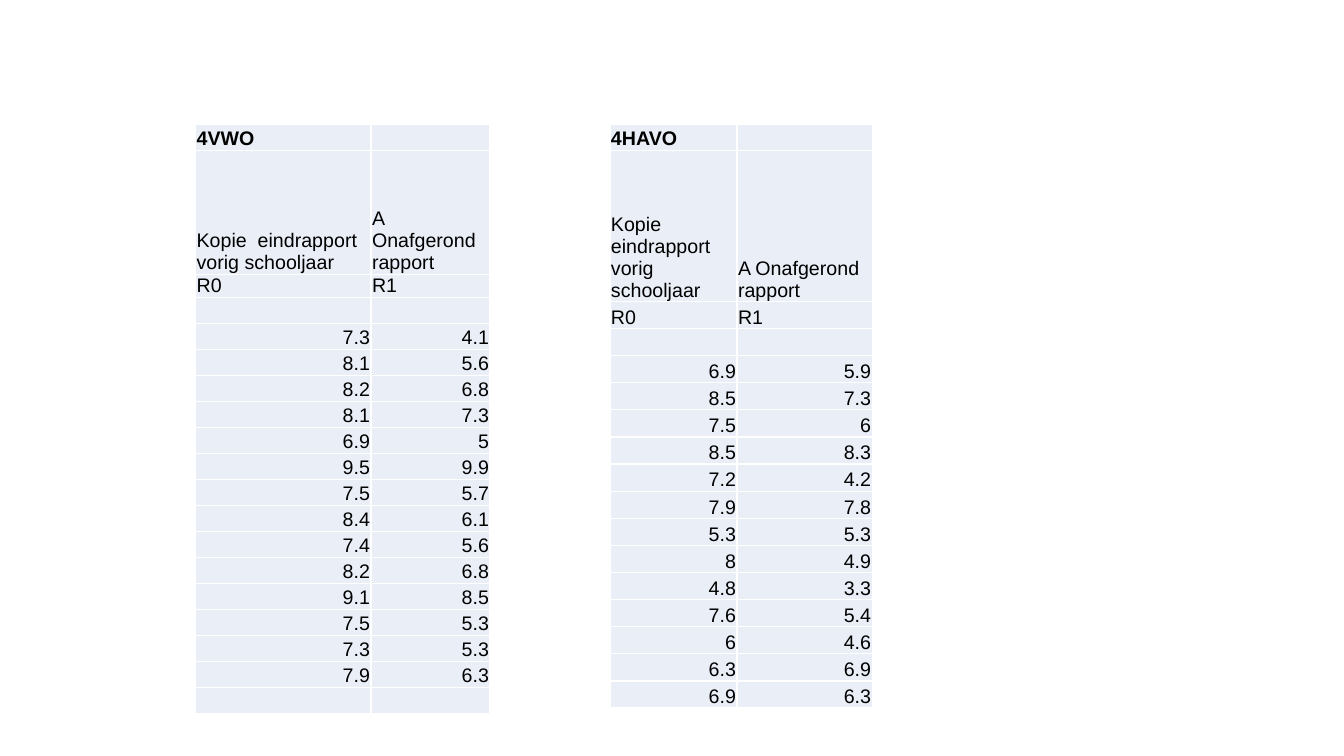
from pptx import Presentation
from pptx.dml.color import RGBColor
from pptx.enum.text import MSO_ANCHOR, PP_ALIGN
from pptx.oxml.ns import qn
from pptx.util import Inches, Pt
from lxml import etree

BOTTOM = MSO_ANCHOR.BOTTOM
LEFT, RIGHT = PP_ALIGN.LEFT, PP_ALIGN.RIGHT

THEME = {
    "font": "Arial",
    "size": Pt(14),
    "text": RGBColor.from_string("000000"),
    "cell": RGBColor.from_string("EAEFF7"),
    "border": "FFFFFF",
    "border_width": Pt(1),
    "inset": Inches(0.01),
}

# Report marks per class: (last year's final report, unrounded report)
HEADINGS = ("Kopie  eindrapport vorig schooljaar", "A Onafgerond rapport")
PERIODS = ("R0", "R1")
BLANK = ("", "")
VWO_MARKS = [
    ("7.3", "4.1"), ("8.1", "5.6"), ("8.2", "6.8"), ("8.1", "7.3"), ("6.9", "5"),
    ("9.5", "9.9"), ("7.5", "5.7"), ("8.4", "6.1"), ("7.4", "5.6"), ("8.2", "6.8"),
    ("9.1", "8.5"), ("7.5", "5.3"), ("7.3", "5.3"), ("7.9", "6.3"), BLANK,
]
HAVO_MARKS = [
    ("6.9", "5.9"), ("8.5", "7.3"), ("7.5", "6"), ("8.5", "8.3"), ("7.2", "4.2"),
    ("7.9", "7.8"), ("5.3", "5.3"), ("8", "4.9"), ("4.8", "3.3"), ("7.6", "5.4"),
    ("6", "4.6"), ("6.3", "6.9"), ("6.9", "6.3"),
]

# Layout in inches: top rows are title, headings and periods; the rest share what is left
TOP = 1.23
CLASSES = [
    {"name": "4VWO", "marks": VWO_MARKS, "left": 1.94, "height": 5.84,
     "columns": (1.74, 1.18), "top_rows": (0.26, 1.23, 0.22)},
    {"name": "4HAVO", "marks": HAVO_MARKS, "left": 6.05, "height": 5.8,
     "columns": (1.26, 1.34), "top_rows": (0.26, 1.5, 0.27)},
]


def style_cell(cell, text, bold, align):
    cell.margin_left = cell.margin_right = cell.margin_top = THEME["inset"]
    cell.margin_bottom = 0
    cell.vertical_anchor = BOTTOM
    paragraph = cell.text_frame.paragraphs[0]
    paragraph.alignment = align
    if text:
        paragraph.add_run().text = text
    else:
        # An empty cell takes its line height from the paragraph end
        end = etree.SubElement(paragraph._p, qn("a:endParaRPr"))
        end.set("sz", str(int(THEME["size"].pt * 100)))
    font = paragraph.font
    font.name, font.size, font.bold = THEME["font"], THEME["size"], bold
    font.color.rgb = THEME["text"]

    # Borders come before the fill in the cell properties
    properties = cell._tc.get_or_add_tcPr()
    for side in ("lnL", "lnR", "lnT", "lnB"):
        line = etree.SubElement(properties, qn(f"a:{side}"), w=str(THEME["border_width"]))
        fill = etree.SubElement(line, qn("a:solidFill"))
        etree.SubElement(fill, qn("a:srgbClr"), val=THEME["border"])
    cell.fill.solid()
    cell.fill.fore_color.rgb = THEME["cell"]


presentation = Presentation()
presentation.slide_width, presentation.slide_height = Inches(13.33), Inches(7.5)
slide = presentation.slides.add_slide(presentation.slide_layouts[6])

# One table per class
for school_class in CLASSES:
    columns, top_rows = school_class["columns"], school_class["top_rows"]
    lines = [(school_class["name"], ""), HEADINGS, PERIODS, BLANK, *school_class["marks"]]
    table = slide.shapes.add_table(
        len(lines), len(columns), Inches(school_class["left"]), Inches(TOP),
        Inches(sum(columns)), Inches(school_class["height"])).table
    table.first_row = table.horz_banding = False

    for column, width in zip(table.columns, columns):
        column.width = Inches(width)
    mark_height = (school_class["height"] - sum(top_rows)) / (len(lines) - len(top_rows))
    for r, line in enumerate(lines):
        is_top = r < len(top_rows)
        table.rows[r].height = Inches(top_rows[r] if is_top else mark_height)
        for c, text in enumerate(line):
            style_cell(table.cell(r, c), text, r == 0, LEFT if is_top else RIGHT)

presentation.save("out.pptx")
